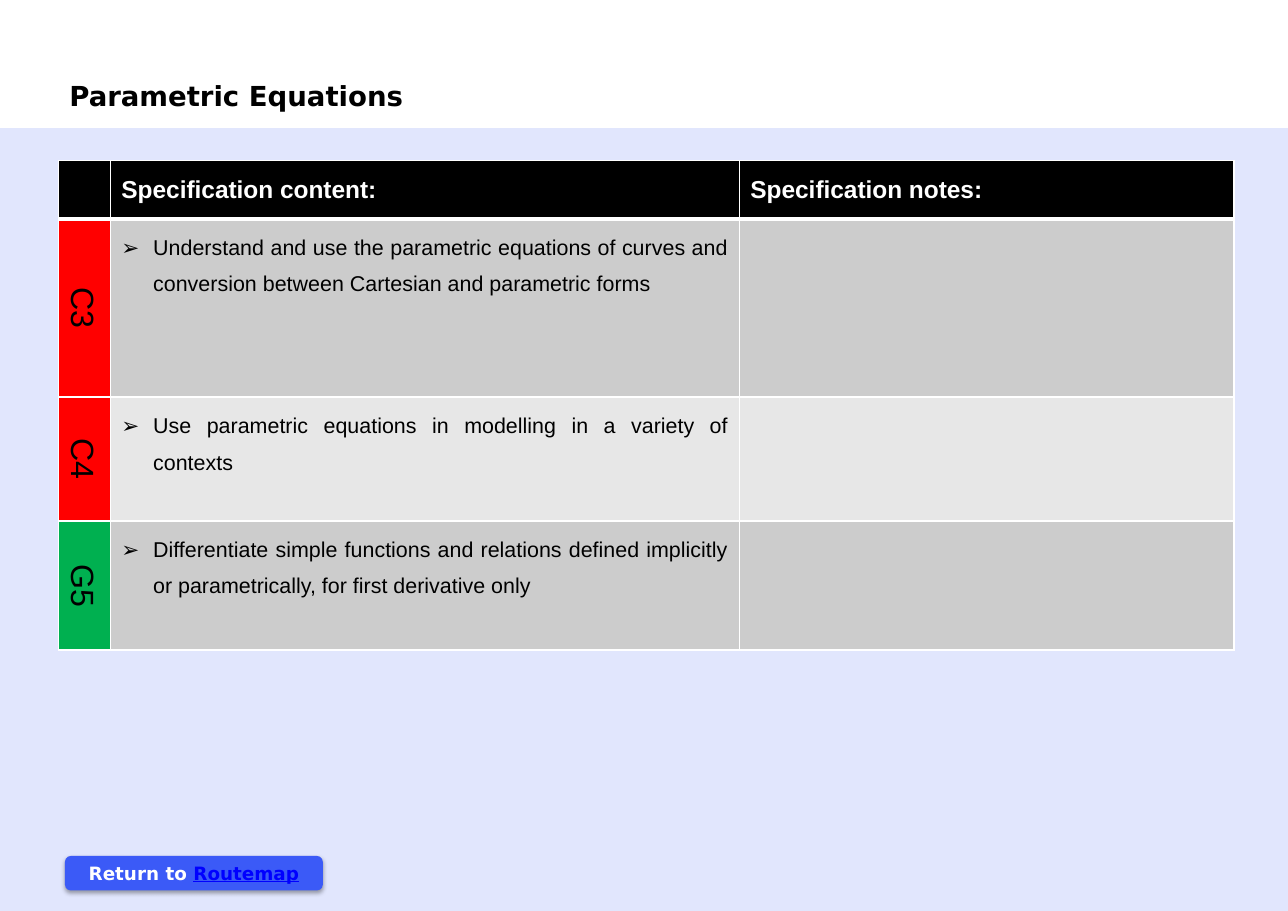
from dataclasses import dataclass

from lxml.etree import SubElement
from pptx import Presentation
from pptx.dml.color import RGBColor
from pptx.enum.shapes import MSO_AUTO_SHAPE_TYPE as ShapeType
from pptx.enum.text import MSO_ANCHOR as Anchor, MSO_AUTO_SIZE as AutoSize, PP_ALIGN as Align
from pptx.oxml import parse_xml
from pptx.oxml.ns import nsdecls, qn
from pptx.util import Pt


@dataclass(frozen=True)
class Theme:
    blue: str = "3B5AF7"
    link: str = "0000FF"
    black: str = "000000"
    white: str = "FFFFFF"
    red: str = "FF0000"
    green: str = "00B050"
    dark_band: str = "CCCCCC"
    light_band: str = "E7E7E7"
    heading_font: str = "DejaVu Sans"
    table_font: str = "Arial"
    title_size: int = 18
    header_size: int = 16
    body_size: int = 14
    code_size: int = 21
    button_size: int = 12


@dataclass(frozen=True)
class Topic:
    code: str
    code_fill: str
    content: str
    height: float


THEME = Theme()
SLIDE_WIDTH, SLIDE_HEIGHT = 841.68, 595.44
BAND_TOP = 83.75
HEADERS = ("", "Specification content:", "Specification notes:")
HEADER_HEIGHT = 38
COLUMN_WIDTHS = (33.8, 411, 323.2)
BULLET_INDENT = 20.7
TOPICS = (
    Topic("C3", THEME.red, "Understand and use the parametric equations of curves and "
          "conversion between Cartesian and parametric forms", 116.5),
    Topic("C4", THEME.red, "Use parametric equations in modelling in a variety of contexts", 81),
    Topic("G5", THEME.green, "Differentiate simple functions and relations defined implicitly "
          "or parametrically, for first derivative only", 84.5),
)


def style_run(run, font: str, size: int, color: str, bold: bool = False) -> None:
    run.font.name = font
    run.font.size = Pt(size)
    run.font.bold = bold
    run.font.color.rgb = RGBColor.from_string(color)


def add_filled_shape(slide, kind, left: float, top: float, width: float, height: float):
    shape = slide.shapes.add_shape(kind, Pt(left), Pt(top), Pt(width), Pt(height))
    shape.shadow.inherit = False
    shape.fill.solid()
    shape.fill.fore_color.rgb = RGBColor.from_string(THEME.blue)
    shape.line.fill.background()
    return shape


def add_background_band(slide) -> None:
    band = add_filled_shape(slide, ShapeType.RECTANGLE, 0, BAND_TOP,
                            SLIDE_WIDTH, SLIDE_HEIGHT - BAND_TOP)
    color = band.fill._xPr.find(qn("a:solidFill"))[0]
    SubElement(color, qn("a:alpha"), val="15000")


def add_return_button(slide) -> None:
    button = add_filled_shape(slide, ShapeType.ROUNDED_RECTANGLE, 42.5, 559.5, 168.5, 22.5)
    effects = button._element.spPr.find(qn("a:effectLst"))
    effects.append(parse_xml(
        f'<a:outerShdw {nsdecls("a")} blurRad="{Pt(3.1)}" dist="{Pt(1.8)}" dir="5400000" '
        f'rotWithShape="0"><a:srgbClr val="{THEME.black}"><a:alpha val="35000"/></a:srgbClr>'
        '</a:outerShdw>'))
    button.text_frame.vertical_anchor = Anchor.MIDDLE
    paragraph = button.text_frame.paragraphs[0]
    paragraph.alignment = Align.CENTER
    for text, color in (("Return to ", THEME.white), ("Routemap", THEME.link)):
        run = paragraph.add_run()
        run.text = text
        style_run(run, THEME.heading_font, THEME.button_size, color, bold=True)
        run.font.underline = color == THEME.link


def add_title(slide) -> None:
    box = slide.shapes.add_textbox(Pt(38.2), Pt(48.2), Pt(234), Pt(28.8))
    box.text_frame.word_wrap = False
    box.text_frame.auto_size = AutoSize.SHAPE_TO_FIT_TEXT
    box.text_frame.text = "Parametric Equations"
    style_run(box.text_frame.paragraphs[0].runs[0], THEME.heading_font,
              THEME.title_size, THEME.black, bold=True)


def style_cell(cell, fill: str, top: int = 1, bottom: int = 1) -> None:
    """Fill the cell and give it white borders; top and bottom are widths in points."""
    cell.fill.solid()
    cell.fill.fore_color.rgb = RGBColor.from_string(fill)
    properties = cell._tc.get_or_add_tcPr()
    borders = (("lnL", 1), ("lnR", 1), ("lnT", top), ("lnB", bottom))
    for index, (tag, width) in enumerate(borders):
        properties.insert(index, parse_xml(
            f'<a:{tag} {nsdecls("a")} w="{Pt(width)}"><a:solidFill>'
            f'<a:srgbClr val="{THEME.white}"/></a:solidFill></a:{tag}>'))


def write_cell(cell, text: str, size: int, color: str, align, bold: bool = False):
    cell.text_frame.text = text
    paragraph = cell.text_frame.paragraphs[0]
    paragraph.alignment = align
    for run in paragraph.runs:
        style_run(run, THEME.table_font, size, color, bold)
    return paragraph


def add_bullet(paragraph) -> None:
    paragraph.line_spacing = 1.5
    properties = paragraph._p.get_or_add_pPr()
    properties.set("marL", str(Pt(BULLET_INDENT)))
    properties.set("indent", str(-Pt(BULLET_INDENT)))
    SubElement(properties, qn("a:buFont"), typeface=THEME.table_font)
    SubElement(properties, qn("a:buChar"), char="➢")


def add_specification_table(slide) -> None:
    heights = (HEADER_HEIGHT, *(topic.height for topic in TOPICS))
    table = slide.shapes.add_table(
        len(heights), len(COLUMN_WIDTHS), Pt(38.4), Pt(105),
        Pt(sum(COLUMN_WIDTHS)), Pt(sum(heights))).table
    table.horz_banding = False
    for column, width in zip(table.columns, COLUMN_WIDTHS):
        column.width = Pt(width)
    for row, height in zip(table.rows, heights):
        row.height = Pt(height)

    for column, header in enumerate(HEADERS):
        cell = table.cell(0, column)
        style_cell(cell, THEME.black, bottom=3)
        cell.vertical_anchor = Anchor.MIDDLE
        write_cell(cell, header, THEME.header_size, THEME.white, Align.LEFT, bold=True)

    for row, topic in enumerate(TOPICS, start=1):
        code, content, notes = table.rows[row].cells
        band = THEME.dark_band if row % 2 else THEME.light_band
        for cell, fill in ((code, topic.code_fill), (content, band), (notes, band)):
            style_cell(cell, fill, top=3 if row == 1 else 1)
        write_cell(code, topic.code, THEME.code_size, THEME.black, Align.CENTER)
        code._tc.get_or_add_tcPr().set("vert", "vert")
        add_bullet(write_cell(content, topic.content, THEME.body_size,
                              THEME.black, Align.JUSTIFY))


def main() -> None:
    presentation = Presentation()
    presentation.slide_width = Pt(SLIDE_WIDTH)
    presentation.slide_height = Pt(SLIDE_HEIGHT)
    slide = presentation.slides.add_slide(presentation.slide_layouts[6])
    add_background_band(slide)
    add_return_button(slide)
    add_specification_table(slide)
    add_title(slide)
    presentation.save("out.pptx")


if __name__ == "__main__":
    main()
